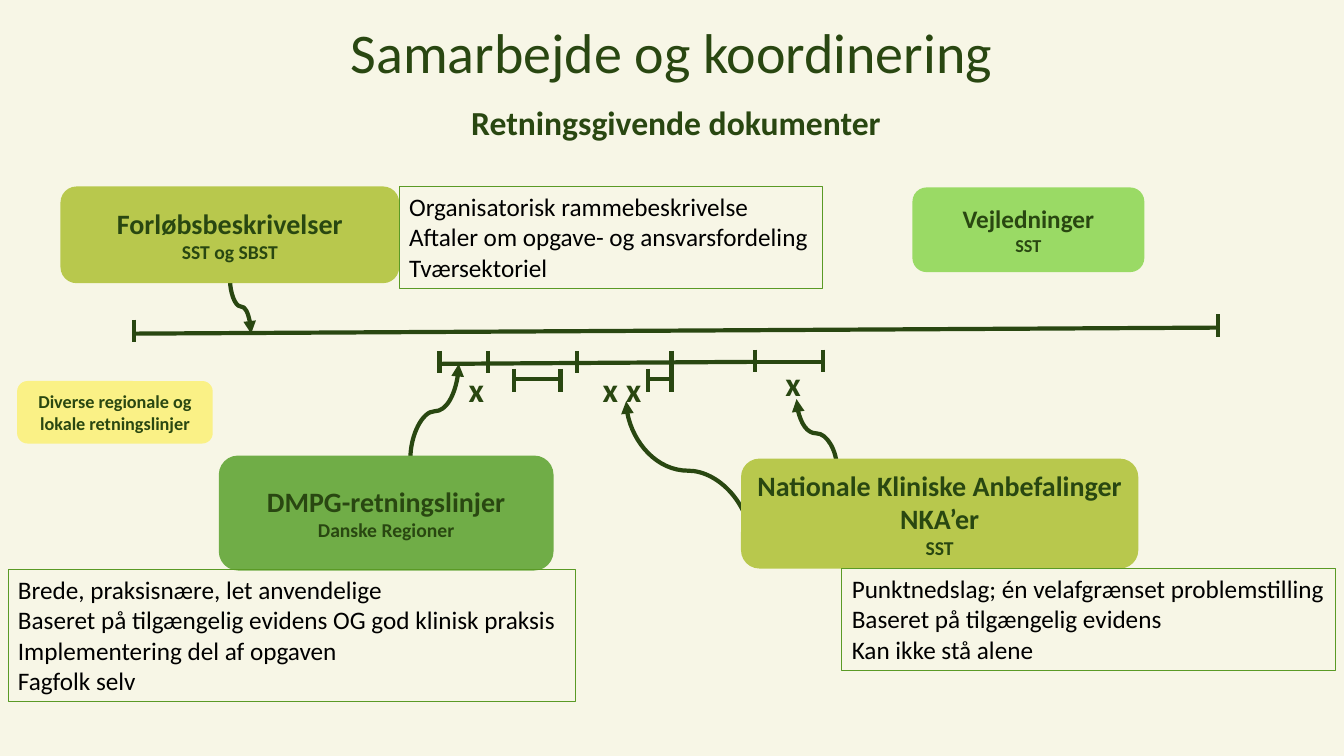
"""Build the slide on collaboration and guiding documents."""
from lxml import etree
from pptx import Presentation
from pptx import util as u
from pptx.dml.color import RGBColor
from pptx.enum import shapes, text
from pptx.oxml.ns import qn

COLORS = {"background": "F7F6E6", "ink": "294711", "black": "000000", "frame": "5A9A25",
          "green": "70AD47", "olive": "B8C84D", "yellow": "FAF186", "light": "9ADA65"}
CELL = u.Inches(0.1)

deck = Presentation()
deck.slide_width, deck.slide_height = u.Inches(13.33), u.Inches(7.5)
page = deck.slides.add_slide(deck.slide_layouts[6])
page.background.fill.solid()
page.background.fill.fore_color.rgb = RGBColor.from_string(COLORS["background"])


def draw_line(kind, *ends):
    """Draw a connector between two points given in grid cells."""
    line = page.shapes.add_connector(kind, *[round(end * CELL) for end in ends])
    line.line.width = u.Pt(3)
    line.line.color.rgb = RGBColor.from_string(COLORS["ink"])
    etree.SubElement(line._element.spPr, qn("a:effectLst"))
    return line


def write(box, lines, color, bold=False, align=text.PP_ALIGN.LEFT,
          anchor=text.MSO_ANCHOR.TOP, wrap=True, spacing=None):
    """Write (wording, size) lines as the paragraphs of a box."""
    frame = box.text_frame
    frame.word_wrap, frame.vertical_anchor = wrap, anchor
    for index, (wording, size) in enumerate(lines):
        para = frame.add_paragraph() if index else frame.paragraphs[0]
        para.alignment, para.line_spacing = align, spacing
        span = para.add_run()
        span.text = wording
        for name, value in {"name": "Calibri", "size": u.Pt(size), "bold": bold}.items():
            setattr(span.font, name, value)
        span.font.color.rgb = RGBColor.from_string(COLORS[color])


spans = [(13.3, 33.1, 120.8, 32.5), (43.6, 36.1, 74.8, 35.9), (74.9, 35.9, 81.6, 35.9),
         (50.9, 37.6, 55.6, 37.6), (64.3, 37.6, 66.6, 37.6)]
for ends in spans:
    draw_line(shapes.MSO_CONNECTOR.STRAIGHT, *ends)

tick_rows = {31.7: [13.3], 31.2: [120.8], 34.8: [43.6, 48.4, 57.2, 66.6],
             34.7: [74.9, 81.6], 36.6: [51, 55.6, 64.3, 66.6]}
for top, columns in tick_rows.items():
    for column in columns:
        draw_line(shapes.MSO_CONNECTOR.STRAIGHT, column, top, column, top + 2.25)

arrows = [(74.4, 53.6, 62.1, 39.8), (22.8, 27.7, 24.9, 33.1),
          (83, 46.4, 79, 39.6), (40.7, 45.5, 45.5, 36.1)]
for x1, y1, x2, y2 in arrows:
    middle_x, middle_y = (x1 + x2) / 2, (y1 + y2) / 2
    half_x, half_y = (x2 - x1) / 2, (y2 - y1) / 2
    arrow = draw_line(shapes.MSO_CONNECTOR.CURVE, middle_x + half_y, middle_y - half_x,
                      middle_x - half_y, middle_y + half_x)
    arrow._element.spPr.find(qn("a:xfrm")).set("rot", str(270 * 60000))
    etree.SubElement(arrow.line._get_or_add_ln(), qn("a:tailEnd"), type="triangle")

marks = [("x x", 58.8, 36.1, 6.6), ("x", 76.9, 35.5, 3), ("x", 45.5, 36.1, 3.6)]
for wording, left, top, width in marks:
    box = page.shapes.add_textbox(*[round(part * CELL) for part in (left, top, width, 5)])
    write(box, [(wording, 24)], "ink", bold=True, wrap=False)

title = page.shapes.add_textbox(*[round(part * CELL) for part in (8, 2, 117.2, 8.4)])
write(title, [("Samarbejde og koordinering", 40)], "ink",
      align=text.PP_ALIGN.CENTER, spacing=0.9)

cards = [
    ((21.7, 45.2, 33.2, 11.4), "green", [("DMPG-retningslinjer", 20), ("Danske Regioner", 14)]),
    ((45, 9.9, 44.1, 4.4), None, [("Retningsgivende dokumenter", 24)]),
    ((6, 18.5, 33.6, 9.6), "olive", [("Forløbsbeskrivelser", 20), ("SST og SBST", 14)]),
    ((73.5, 45.5, 39.4, 10.9), "olive",
     [("Nationale Kliniske Anbefalinger", 20), ("NKA’er", 20), ("SST", 14)]),
    ((1.7, 37.8, 19.4, 6.2), "yellow", [("Diverse regionale og lokale retningslinjer", 13)]),
    ((90.5, 18.6, 23, 8.4), "light", [("Vejledninger", 18), ("SST", 13)]),
]
for place, fill, lines in cards:
    card = page.shapes.add_shape(shapes.MSO_SHAPE.ROUNDED_RECTANGLE,
                                 *[round(part * CELL) for part in place])
    card.shadow.inherit = False
    card.line.fill.background()
    if fill:
        card.fill.solid()
        card.fill.fore_color.rgb = RGBColor.from_string(COLORS[fill])
    else:
        card.fill.background()
    write(card, lines, "ink", bold=True, align=text.PP_ALIGN.CENTER,
          anchor=text.MSO_ANCHOR.MIDDLE)

notes = [
    ((0.8, 56.5, 56.3, 13.1),
     ["Brede, praksisnære, let anvendelige",
      "Baseret på tilgængelig evidens OG god klinisk praksis",
      "Implementering del af opgaven", "Fagfolk selv"]),
    ((83.5, 56.4, 49, 10.1),
     ["Punktnedslag; én velafgrænset problemstilling",
      "Baseret på tilgængelig evidens", "Kan ikke stå alene"]),
    ((39.6, 18.5, 42, 10.1),
     ["Organisatorisk rammebeskrivelse", "Aftaler om opgave- og ansvarsfordeling",
      "Tværsektoriel"]),
]
for place, lines in notes:
    note = page.shapes.add_shape(shapes.MSO_SHAPE.RECTANGLE,
                                 *[round(part * CELL) for part in place])
    note.shadow.inherit = False
    note.fill.background()
    note.line.width = u.Pt(0.75)
    note.line.color.rgb = RGBColor.from_string(COLORS["frame"])
    write(note, [(line, 18) for line in lines], "black")

deck.save("out.pptx")
